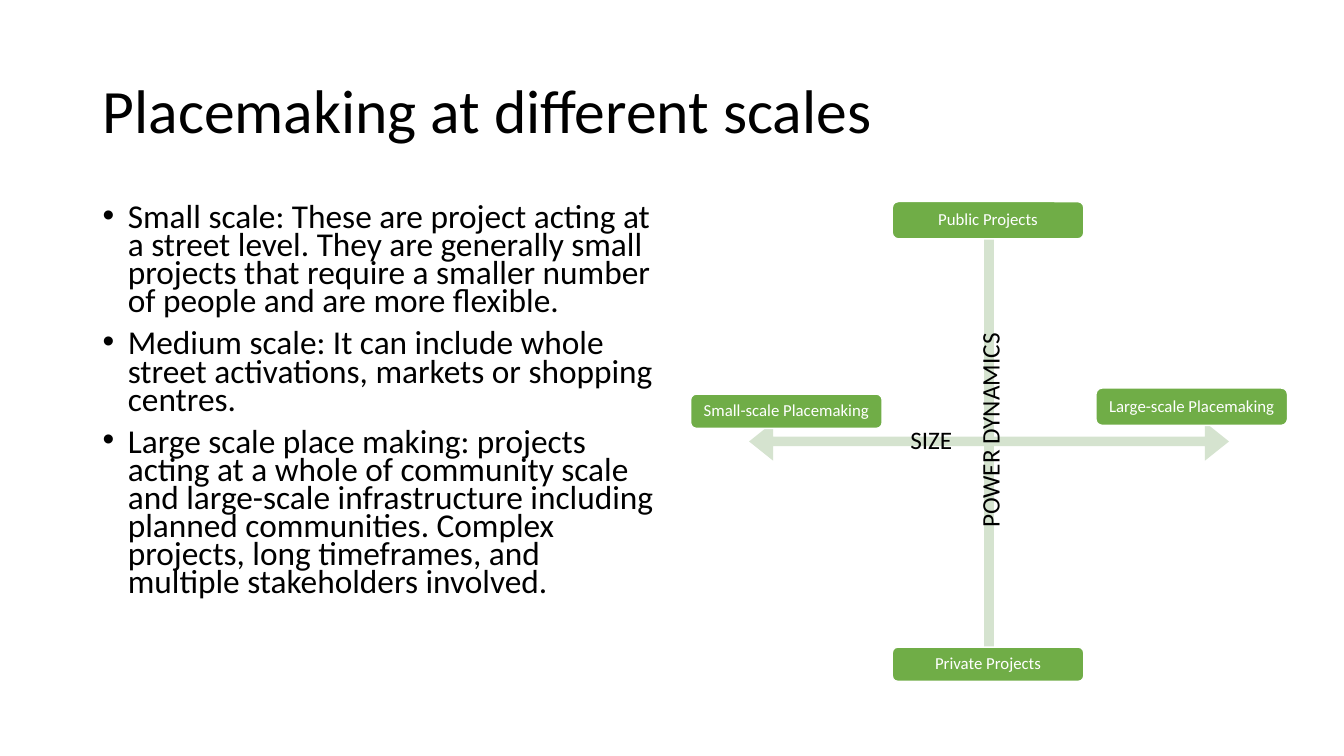
"""Build the slide on placemaking at different scales."""
from dataclasses import dataclass

from lxml import etree
from pptx import Presentation
from pptx.dml.color import RGBColor
from pptx.enum.shapes import MSO_SHAPE
from pptx.enum.text import MSO_ANCHOR, PP_ALIGN
from pptx.oxml.ns import qn
from pptx.util import Inches, Pt

BLACK = RGBColor(0x00, 0x00, 0x00)
WHITE = RGBColor(0xFF, 0xFF, 0xFF)
GREEN = RGBColor(0x70, 0xAD, 0x47)
PALE_GREEN = RGBColor(0xD5, 0xE3, 0xCF)
FONT = "Calibri"
ROUND_RECT = MSO_SHAPE.ROUNDED_RECTANGLE
QUAD_ARROW = MSO_SHAPE.QUAD_ARROW
TOP, MIDDLE = MSO_ANCHOR.TOP, MSO_ANCHOR.MIDDLE
CENTER = PP_ALIGN.CENTER


@dataclass
class Box:
    left: float
    top: float
    width: float
    height: float

    def lengths(self):
        return [Inches(v) for v in (self.left, self.top, self.width, self.height)]


@dataclass
class Label:
    text: str
    box: Box


@dataclass
class AxisName:
    text: str
    box: Box
    rotation: int = 0


TITLE = "Placemaking at different scales"
SCALES = [
    "Small scale: These are project acting at a street level. They are generally "
    "small projects that require a smaller number of people and are more flexible.",
    "Medium scale: It can include whole street activations, markets or shopping centres.",
    "Large scale place making: projects acting at a whole of community scale and "
    "large-scale infrastructure including planned communities. Complex projects, "
    "long timeframes, and multiple stakeholders involved.",
]
LABELS = [
    Label("Public Projects", Box(8.85, 2, 1.9, 0.37)),
    Label("Large-scale Placemaking", Box(10.87, 3.85, 1.9, 0.37)),
    Label("Small-scale Placemaking", Box(6.85, 3.91, 1.9, 0.34)),
    Label("Private Projects", Box(8.85, 6.42, 1.9, 0.34)),
]
AXIS_NAMES = [
    AxisName("SIZE", Box(8.93, 4.16, 0.62, 0.4)),
    AxisName("POWER DYNAMICS", Box(8.74, 4.06, 2.15, 0.4), 270),
]


def format_runs(p, size: float, color: RGBColor) -> None:
    for r in p.runs:
        r.font.name = FONT
        r.font.size = Pt(size)
        r.font.color.rgb = color


def add_text(slide, box: Box, text: str, size: float, anchor=TOP, wrap=True):
    sp = slide.shapes.add_textbox(*box.lengths())
    tf = sp.text_frame
    tf.word_wrap = wrap
    tf.vertical_anchor = anchor
    tf.text = text
    for p in tf.paragraphs:
        format_runs(p, size, BLACK)
    return sp


def add_bullet(p) -> None:
    pPr = p._p.get_or_add_pPr()
    pPr.set("marL", str(Inches(0.25)))
    pPr.set("indent", str(-Inches(0.25)))
    etree.SubElement(pPr, qn("a:buFont")).set("typeface", "Arial")
    etree.SubElement(pPr, qn("a:buChar")).set("char", "•")


def add_scales(slide, box: Box) -> None:
    sp = add_text(slide, box, "\n".join(SCALES), 23.8)
    for i, p in enumerate(sp.text_frame.paragraphs):
        add_bullet(p)
        p.line_spacing = 0.7
        if i:
            p.space_before = Pt(10)


def add_axes(slide, box: Box) -> None:
    sp = slide.shapes.add_shape(QUAD_ARROW, *box.lengths())
    sp.shadow.inherit = False
    for i, value in enumerate((0.02, 0.04, 0.05)):
        sp.adjustments[i] = value
    sp.fill.solid()
    sp.fill.fore_color.rgb = PALE_GREEN
    sp.line.fill.background()


def add_label(slide, label: Label) -> None:
    sp = slide.shapes.add_shape(ROUND_RECT, *label.box.lengths())
    sp.shadow.inherit = False
    sp.fill.solid()
    sp.fill.fore_color.rgb = GREEN
    sp.line.color.rgb = WHITE
    sp.line.width = Pt(1)
    tf = sp.text_frame
    tf.word_wrap = True
    tf.vertical_anchor = MIDDLE
    tf.margin_left = tf.margin_right = Inches(0.05)
    tf.margin_top = tf.margin_bottom = Inches(0.05)
    tf.text = label.text
    p = tf.paragraphs[0]
    p.alignment = CENTER
    p.line_spacing = 0.9
    format_runs(p, 12, WHITE)


def main() -> None:
    prs = Presentation()
    prs.slide_width, prs.slide_height = Inches(13.33), Inches(7.5)
    slide = prs.slides.add_slide(prs.slide_layouts[6])
    title = add_text(slide, Box(0.92, 0.4, 11.5, 1.45), TITLE, 44, MIDDLE)
    title.text_frame.paragraphs[0].line_spacing = 0.9
    add_scales(slide, Box(0.92, 2, 5.67, 4.76))
    add_axes(slide, Box(7.43, 2, 4.76, 4.76))
    for label in LABELS:
        add_label(slide, label)
    for axis in AXIS_NAMES:
        sp = add_text(slide, axis.box, axis.text, 18, wrap=False)
        sp.rotation = axis.rotation
    prs.save("out.pptx")


if __name__ == "__main__":
    main()
